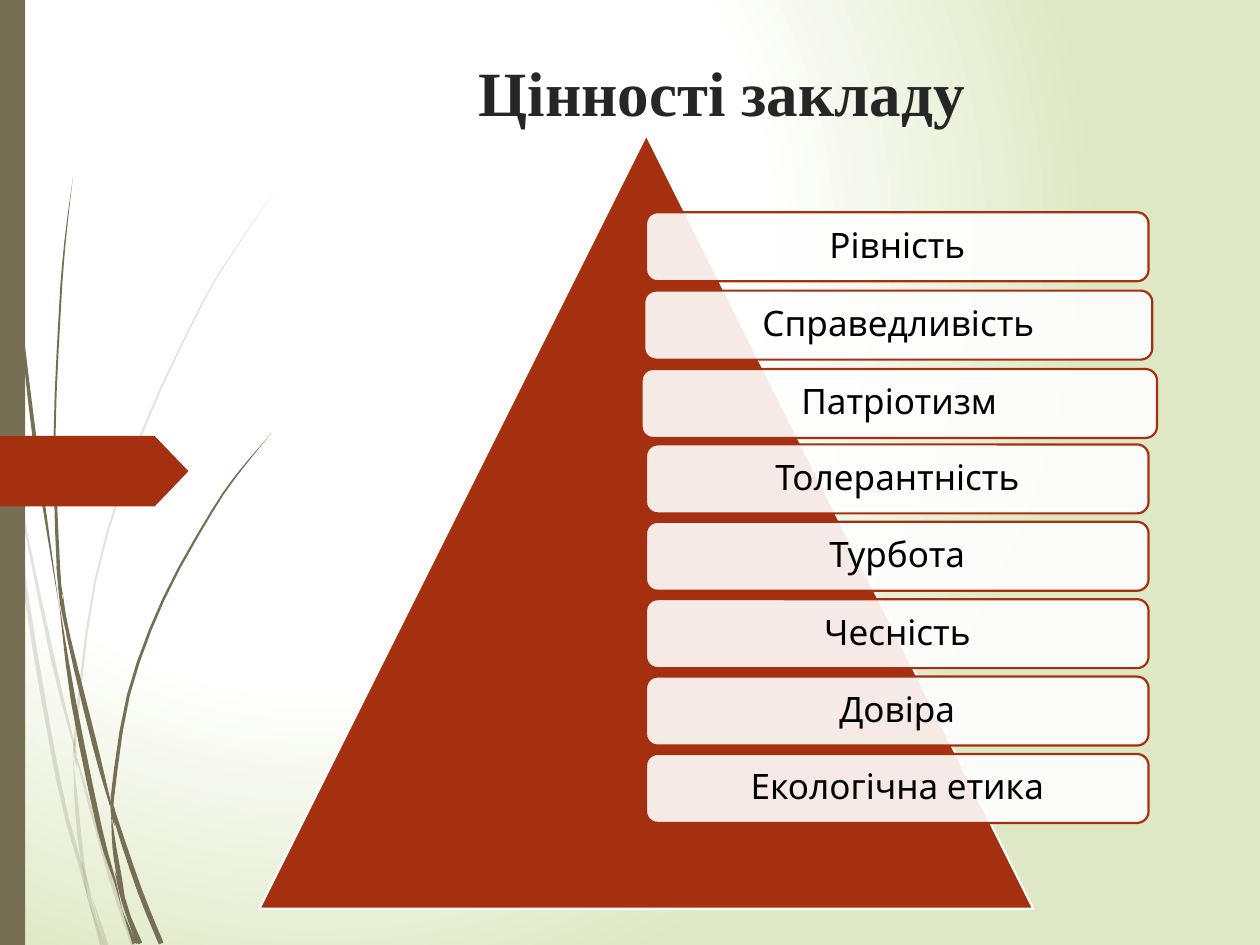
from collections import namedtuple
from math import hypot

from lxml import etree
from pptx import Presentation
from pptx.dml.color import RGBColor
from pptx.enum.shapes import MSO_SHAPE
from pptx.enum.text import MSO_ANCHOR, PP_ALIGN
from pptx.oxml import parse_xml
from pptx.oxml.ns import nsdecls, qn
from pptx.util import Cm, Pt

OLIVE = RGBColor(0x76, 0x6F, 0x54)
RUST = RGBColor(0xA5, 0x30, 0x10)
PALE_GREEN = RGBColor(0xDF, 0xE8, 0xC4)
WHITE = RGBColor(0xFF, 0xFF, 0xFF)
BLACK = RGBColor(0, 0, 0)
CHARCOAL = RGBColor(0x26, 0x26, 0x26)

Box = namedtuple("Box", "left top width height")  # centimetres
Pill = namedtuple("Pill", "value width shift", defaults=(10.13, 0))

PILLS = [Pill("Рівність"), Pill("Справедливість", 10.24, 0.02),
         Pill("Патріотизм", 10.39, 0.04), Pill("Толерантність"),
         Pill("Турбота"), Pill("Чесність"), Pill("Довіра"),
         Pill("Екологічна етика")]

# Each blade of grass is a centre line of (x, y, thickness), from the top down
FAINT_BLADES = [
    [(0, 7.37, 0.06), (0.16, 8.5, 0.03), (0.2, 8.89, 0)],
    [(0.25, 8.76, 0), (0.3, 9.55, 0.02), (1.05, 13.23, 0.08),
     (1.5, 15.04, 0.03)],
    [(1.55, 15.3, 0.03), (2.2, 17.6, 0.08), (2.69, 19.05, 0.09)],
    [(1.85, 18.06, 0), (2.15, 19.05, 0.07)],
    [(0.2, 8.89, 0), (0.52, 11.93, 0.08), (1.18, 15.75, 0.08),
     (1.63, 17.48, 0.07), (1.78, 18.14, 0)],
    [(1.47, 15.21, 0), (1.56, 16.41, 0.08), (1.68, 17.45, 0.06),
     (1.85, 18.06, 0)],
    [(5.51, 3.89, 0), (4.74, 5.02, 0.02), (4.03, 6.21, 0.03),
     (2.81, 8.85, 0.04), (1.92, 11.71, 0.04), (1.52, 14.83, 0.05),
     (1.54, 15.14, 0)],
    [(1.78, 18.14, 0), (2.05, 19.05, 0.07)],
    [(1.5, 14.88, 0), (1.51, 15.17, 0.07), (1.55, 15.49, 0)],
    [(1.65, 17.35, 0), (1.8, 18.1, 0.08), (2.1, 19.05, 0.03)],
]
DARK_BLADES = [
    [(0.06, 0, 0.03), (0.14, 2.78, 0.03), (0.37, 5.92, 0.04),
     (0.72, 9.02, 0.08), (1.19, 12.22, 0)],
    [(1.27, 11.99, 0), (1.38, 12.83, 0.07), (1.91, 15.01, 0.1),
     (2.23, 16.23, 0.04)],
    [(2.31, 16.28, 0), (2.35, 16.56, 0.08), (2.82, 17.96, 0.1),
     (3.25, 19.02, 0.1)],
    [(1.19, 12.12, 0), (1.48, 14.13, 0.1), (2.01, 16.71, 0.1),
     (2.32, 17.77, 0.04), (2.46, 18.34, 0)],
    [(1.47, 3.58, 0), (1.31, 4.9, 0.03), (1.21, 6.22, 0.04),
     (1.1, 8.86, 0.04), (1.18, 11.46, 0.07), (1.26, 11.99, 0.02)],
    [(2.54, 18.26, 0), (2.83, 19.02, 0.08)],
    [(1.14, 11.4, 0), (1.24, 12.13, 0.07), (1.35, 12.83, 0)],
    [(5.47, 8.74, 0), (4.85, 9.48, 0.03), (4.28, 10.3, 0.04),
     (3.3, 12.07, 0.05), (2.59, 14.01, 0.06), (2.27, 16.05, 0.07),
     (2.31, 16.28, 0)],
    [(2.46, 18.34, 0), (2.71, 19.02, 0.08)],
    [(2.24, 16.38, 0), (2.31, 17.1, 0.08), (2.42, 17.74, 0.09),
     (2.54, 18.26, 0)],
    [(2.24, 16.03, 0), (2.27, 16.35, 0.08), (2.31, 16.66, 0)],
    [(2.31, 17.55, 0), (2.49, 18.15, 0.09), (2.77, 19.02, 0.05)],
]


def paint(shape, color, opacity=100, line=None):
    shape.shadow.inherit = False
    shape.fill.solid()
    shape.fill.fore_color.rgb = color
    if opacity < 100:
        srgb = shape.fill._xPr.find(".//" + qn("a:srgbClr"))
        etree.SubElement(srgb, qn("a:alpha"), val=str(opacity * 1000))
    if line is None:
        shape.line.fill.background()
    else:
        shape.line.color.rgb = line
        shape.line.width = Pt(1.25)


def add_preset(slide, kind, box):
    return slide.shapes.add_shape(kind, *(Cm(length) for length in box))


def write(shape, text, font_name, size, color, anchor, bold=False):
    frame = shape.text_frame
    frame.word_wrap = True
    frame.vertical_anchor = anchor
    paragraph = frame.paragraphs[0]
    paragraph.text = text
    paragraph.alignment = PP_ALIGN.CENTER
    font = paragraph.font
    font.name, font.size, font.bold = font_name, Pt(size), bold
    font.color.rgb = color
    return paragraph


def add_background(slide):
    stops = "".join(
        f'<a:gs pos="{percent * 1000}"><a:srgbClr val="{color}"/></a:gs>'
        for percent, color in [(21, WHITE), (57, WHITE), (100, PALE_GREEN)])
    slide._element.cSld.insert(0, parse_xml(
        f'<p:bg {nsdecls("p", "a")}><p:bgPr><a:gradFill rotWithShape="1">'
        f'<a:gsLst>{stops}</a:gsLst><a:path path="circle">'
        '<a:fillToRect l="50000" t="50000" r="100000" b="100000"/></a:path>'
        '</a:gradFill><a:effectLst/></p:bgPr></p:bg>'))


def smooth_curve(points, steps=3):
    """Catmull-Rom curve through the points."""
    padded = [points[0], *points, points[-1]]
    curve = []
    for a, b, c, d in zip(padded, padded[1:], padded[2:], padded[3:]):
        for step in range(steps):
            t = step / steps
            curve.append(tuple(
                q + t * (r - p) / 2 + t**2 * (2 * p - 5 * q + 4 * r - s) / 2
                + t**3 * (3 * q - p - 3 * r + s) / 2
                for p, q, r, s in zip(a, b, c, d)))
    return curve + [points[-1]]


def add_blade(slide, box, spine, opacity):
    curve = smooth_curve(spine)
    left_edge, right_edge = [], []
    for i, (x, y, thickness) in enumerate(curve):
        before, after = curve[max(i - 1, 0)], curve[min(i + 1, len(curve) - 1)]
        dx, dy = after[0] - before[0], after[1] - before[1]
        half = max(thickness, 0) / 2 / hypot(dx, dy)
        left_edge.append((Cm(x - dy * half), Cm(y + dx * half)))
        right_edge.append((Cm(x + dy * half), Cm(y - dx * half)))
    outline = left_edge + right_edge[::-1]
    builder = slide.shapes.build_freeform(*outline[0])
    builder.add_line_segments(outline[1:])
    paint(builder.convert_to_shape(Cm(box.left), Cm(box.top)), OLIVE, opacity)


def add_side_decoration(slide, box):
    for blades, opacity in [(FAINT_BLADES, 20), (DARK_BLADES, 100)]:
        for spine in blades:
            add_blade(slide, box, spine, opacity)
    bar = add_preset(slide, MSO_SHAPE.RECTANGLE,
                     Box(box.left, box.top, 0.51, box.height))
    paint(bar, OLIVE)
    arrow = add_preset(slide, MSO_SHAPE.PENTAGON,
                       Box(box.left, box.top + 8.79, 3.8, 1.42))
    arrow.adjustments[0] = 0.48
    paint(arrow, RUST)


def add_title(slide, box):
    title = slide.shapes.add_textbox(*(Cm(length) for length in box))
    write(title, "Цінності закладу", "Times New Roman", 36, CHARCOAL,
          MSO_ANCHOR.BOTTOM, bold=True)


def add_value_pyramid(slide, box):
    pyramid = add_preset(slide, MSO_SHAPE.ISOSCELES_TRIANGLE, box)
    paint(pyramid, RUST, line=WHITE)
    center, first_top, pitch = box.left + 12.86, box.top + 1.56, 1.56
    for row, (value, width, shift) in enumerate(PILLS):
        pill = add_preset(slide, MSO_SHAPE.ROUNDED_RECTANGLE,
                          Box(center + shift - width / 2,
                              first_top + row * pitch + shift, width, 1.39))
        paint(pill, WHITE, opacity=90, line=RUST)
        paragraph = write(pill, value, "League Spartan", 20, BLACK,
                          MSO_ANCHOR.MIDDLE)
        paragraph.line_spacing = 0.9


def main():
    prs = Presentation()
    prs.slide_width, prs.slide_height = Cm(25.4), Cm(19.05)
    slide = prs.slides.add_slide(prs.slide_layouts[6])
    add_background(slide)
    add_side_decoration(slide, Box(0, 0, 5.51, 19.05))
    add_title(slide, Box(5.4, 0.72, 18.31, 2))
    add_value_pyramid(slide, Box(5.23, 2.72, 15.6, 15.6))
    prs.save("out.pptx")


if __name__ == "__main__":
    main()
